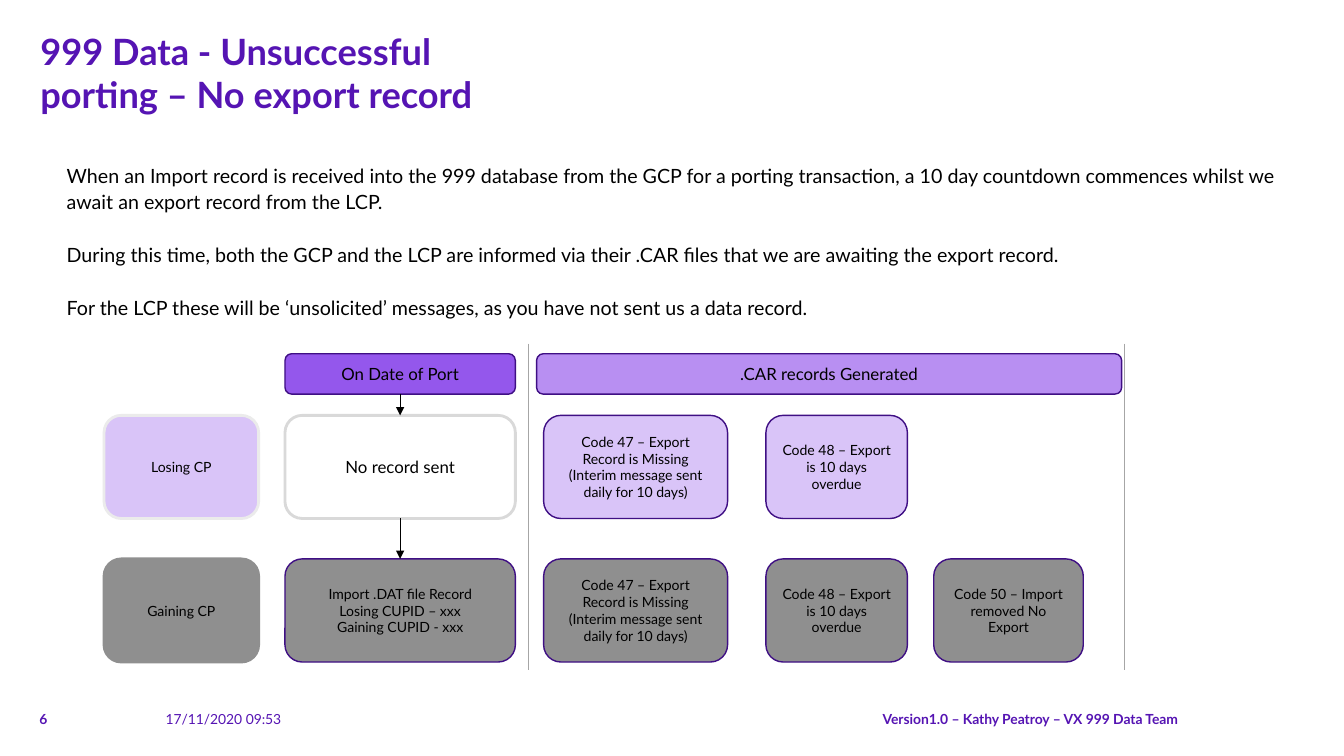
import pptx
import pptx.util
import pptx.dml.color
import pptx.enum.shapes
import pptx.enum.text
import pptx.oxml
import pptx.oxml.ns
from dataclasses import dataclass

Inches, Pt = pptx.util.Inches, pptx.util.Pt
Align, Anchor = pptx.enum.text.PP_ALIGN, pptx.enum.text.MSO_ANCHOR

# Content
TITLE = "999 Data - Unsuccessful porting – No export record"
EXPLANATION = [
    "When an Import record is received into the 999 database from the GCP for a porting "
    "transaction, a 10 day countdown commences whilst we await an export record from the LCP.",
    "During this time, both the GCP and the LCP are informed via their .CAR files that we are "
    "awaiting the export record.",
    "For the LCP these will be ‘unsolicited’ messages, as you have not sent us a data record.",
]
CODE_47 = "Code 47 – Export Record is Missing\n(Interim message sent daily for 10 days)"
CODE_48 = "Code 48 – Export is 10 days overdue"
CODE_50 = "Code 50 – Import removed No Export"
IMPORT_RECORD = "Import .DAT file Record\nLosing CUPID – xxx\nGaining CUPID - xxx"


@dataclass(frozen=True)
class Theme:
    font: str = "Lato"
    brand: str = "5514B3"
    text: str = "000000"
    outline: str = "3F0F84"
    port_header: str = "9457EC"
    car_header: str = "B88FF2"
    losing: str = "D9C4F8"
    losing_edge: str = "EBEBEB"
    gaining: str = "8F8F8F"
    blank: str = "FFFFFF"
    blank_edge: str = "D9D9D9"
    divider: str = "A6A6A6"
    title_size: float = 25.8
    body_size: float = 14
    header_size: float = 12
    box_size: float = 10
    footer_size: float = 9.9


THEME = Theme()

# Layout in inches: columns are (left, width), rows are (top, height)
PARTY, PORT, CAR = (1.03, 1.53), (2.82, 2.28), (5.31, 5.79)
MISSING, OVERDUE, REMOVED = (5.38, 1.82), (7.58, 1.4), (9.24, 1.48)
HEADER, LOSING, GAINING = (3.5, 0.4), (4.11, 1.02), (5.53, 1.02)
DIVIDERS, DIVIDER_TOP, DIVIDER_BOTTOM = (5.23, 11.13), 3.4, 6.63
FOOTER_TOP, FOOTER_HEIGHT = 6.91, 0.29

# Boxes: column, row, text, fill, edge, edge width, type size
EDGE = (THEME.outline, 1)
BOXES = {
    "port header": (PORT, HEADER, "On Date of Port", THEME.port_header, *EDGE, THEME.header_size),
    "car header": (CAR, HEADER, ".CAR records Generated", THEME.car_header, *EDGE,
                   THEME.header_size),
    "losing": (PARTY, LOSING, "Losing CP", THEME.losing, THEME.losing_edge, 2, THEME.box_size),
    "no record": (PORT, LOSING, "No record sent", THEME.blank, THEME.blank_edge, 2,
                  THEME.header_size),
    "losing 47": (MISSING, LOSING, CODE_47, THEME.losing, *EDGE, THEME.box_size),
    "losing 48": (OVERDUE, LOSING, CODE_48, THEME.losing, *EDGE, THEME.box_size),
    "gaining": (PARTY, GAINING, "Gaining CP", THEME.gaining, THEME.gaining, 2, THEME.box_size),
    "import": (PORT, GAINING, IMPORT_RECORD, THEME.gaining, *EDGE, THEME.box_size),
    "gaining 47": (MISSING, GAINING, CODE_47, THEME.gaining, *EDGE, THEME.box_size),
    "gaining 48": (OVERDUE, GAINING, CODE_48, THEME.gaining, *EDGE, THEME.box_size),
    "gaining 50": (REMOVED, GAINING, CODE_50, THEME.gaining, *EDGE, THEME.box_size),
}
ARROWS = [("port header", "no record"), ("no record", "import")]

# Footer: left, width, text, alignment, bold
FOOTER = [
    (0.39, 0.39, "6", Align.LEFT, True),
    (1.64, 2.03, "17/11/2020 09:53", Align.LEFT, False),
    (3.99, 7.67, "Version1.0 – Kathy Peatroy – VX 999 Data Team", Align.RIGHT, True),
]


def rgb(colour):
    return pptx.dml.color.RGBColor.from_string(colour)


def write(frame, text, size, colour, align=Align.LEFT, bold=False, anchor=Anchor.TOP):
    frame.text = text
    frame.word_wrap = True
    frame.auto_size = pptx.enum.text.MSO_AUTO_SIZE.NONE
    frame.vertical_anchor = anchor
    for paragraph in frame.paragraphs:
        paragraph.alignment = align
        for run in paragraph.runs:
            run.font.name, run.font.size, run.font.bold = THEME.font, Pt(size), bold
            run.font.color.rgb = rgb(colour)


def clear_margins(frame):
    frame.margin_left = frame.margin_right = frame.margin_top = frame.margin_bottom = 0


def add_label(slide, left, top, width, height, *text_format):
    frame = slide.shapes.add_textbox(*map(Inches, (left, top, width, height))).text_frame
    clear_margins(frame)
    write(frame, *text_format)
    return frame


def add_box(slide, column, row, text, fill, edge, edge_width, size):
    (left, width), (top, height) = column, row
    box = slide.shapes.add_shape(pptx.enum.shapes.MSO_SHAPE.ROUNDED_RECTANGLE,
                                 *map(Inches, (left, top, width, height)))
    box.shadow.inherit = False
    box.fill.solid()
    box.fill.fore_color.rgb = rgb(fill)
    box.line.color.rgb = rgb(edge)
    box.line.width = Pt(edge_width)
    write(box.text_frame, text, size, THEME.text, Align.CENTER, anchor=Anchor.MIDDLE)
    return box


def add_line(slide, start, end, colour, width):
    line = slide.shapes.add_connector(pptx.enum.shapes.MSO_CONNECTOR.STRAIGHT,
                                      *map(Inches, (*start, *end)))
    line.line.color.rgb = rgb(colour)
    line.line.width = Pt(width)
    line._element.spPr.append(pptx.oxml.parse_xml(
        f"<a:effectLst {pptx.oxml.ns.nsdecls('a')}/>"))
    return line


def add_arrow(slide, source, target):
    arrow = add_line(slide, (0, 0), (1, 1), THEME.text, 0.5)
    arrow.begin_connect(source, 2)
    arrow.end_connect(target, 0)
    arrow.line._get_or_add_ln().append(pptx.oxml.parse_xml(
        f"<a:tailEnd {pptx.oxml.ns.nsdecls('a')} type='triangle'/>"))


def main():
    deck = pptx.Presentation()
    deck.slide_width, deck.slide_height = Inches(13.3), Inches(7.48)
    slide = deck.slides.add_slide(deck.slide_layouts[5])

    # Title
    title = slide.shapes.title
    title.left, title.top, title.width, title.height = map(Inches, (0.4, 0.29, 5.08, 0.87))
    clear_margins(title.text_frame)
    write(title.text_frame, TITLE, THEME.title_size, THEME.brand, bold=True)

    # Explanation
    explanation = add_label(slide, 0.66, 1.6, 12.44, 1.71, "\n".join(EXPLANATION),
                            THEME.body_size, THEME.text)
    for paragraph in explanation.paragraphs:
        paragraph.line_spacing = 1.1
        paragraph.space_after = Pt(19.4)

    # Porting diagram
    boxes = {name: add_box(slide, *box) for name, box in BOXES.items()}
    for source, target in ARROWS:
        add_arrow(slide, boxes[source], boxes[target])
    for x in DIVIDERS:
        add_line(slide, (x, DIVIDER_TOP), (x, DIVIDER_BOTTOM), THEME.divider, 0.75)

    # Footer
    for left, width, text, align, bold in FOOTER:
        add_label(slide, left, FOOTER_TOP, width, FOOTER_HEIGHT, text, THEME.footer_size,
                  THEME.brand, align, bold, Anchor.BOTTOM)

    deck.save("out.pptx")


if __name__ == "__main__":
    main()
